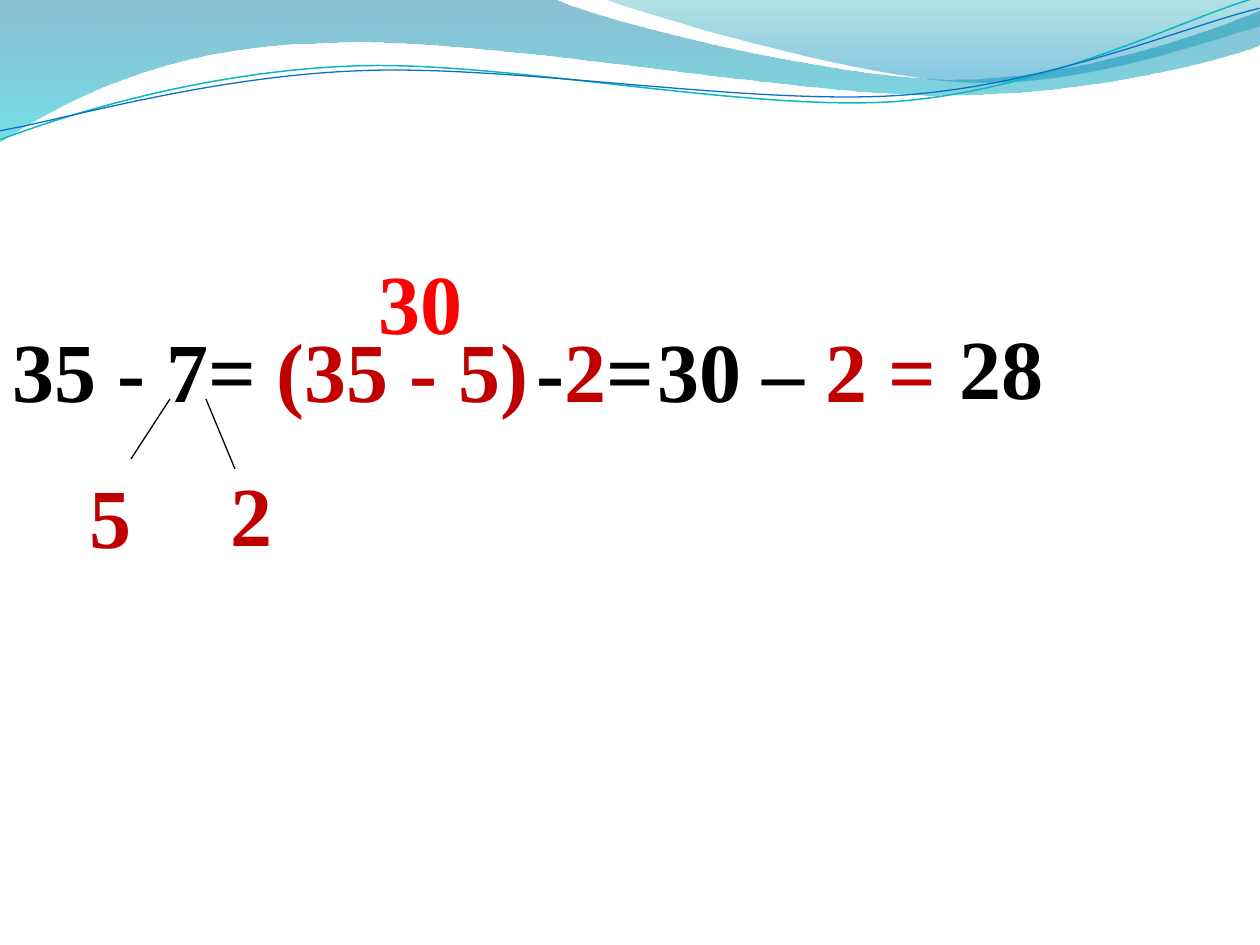
from lxml.etree import SubElement
from pptx import Presentation
from pptx.dml.color import RGBColor
from pptx.enum.shapes import MSO_CONNECTOR
from pptx.enum.text import PP_ALIGN
from pptx.oxml.ns import qn
from pptx.util import Pt

PX = 914400 / 126
COLORS = {
    "black": "000000", "dark_red": "C00000", "red": "FF0000",
    "deep_blue": "0074A1", "cyan": "00C6CF", "teal": "00A1A9",
    "sky": "008BBF", "teal_line": "0AB8BF", "blue_line": "0F6FC6",
}


def color(name):
    return RGBColor.from_string(COLORS[name])


def add_wave(start, segments, close):
    """Draw an outline; a segment is one line end or three Bezier points."""
    points = [point for segment in segments for point in segment]
    builder = slide.shapes.build_freeform(*start, scale=PX)
    builder.add_line_segments(points, close=close)
    shape = builder.convert_to_shape()
    shape.shadow.inherit = False
    # Merge each three line ends of a curve into one Bezier element
    line_ends = iter(list(shape._element.iter(qn("a:lnTo"))))
    for segment in segments:
        group = [next(line_ends) for point in segment]
        if len(group) == 3:
            group[0].tag = qn("a:cubicBezTo")
            for line_end in group[1:]:
                group[0].append(line_end[0])
                line_end.getparent().remove(line_end)
    return shape


presentation = Presentation()
presentation.slide_width = round(1260 * PX)
presentation.slide_height = round(945 * PX)
slide = presentation.slides.add_slide(presentation.slide_layouts[6])

# Translucent waves: start, segments, gradient stops (position, color, opacity %)
waves = [
    ((0, 0), [[(554, -1)],
              [(600, 21), (837, 79), (955, 79)],
              [(1075, 79), (1207, 33), (1260, 11)],
              [(1261, 45)],
              [(1239, 55), (1096, 96), (940, 95)],
              [(784, 95), (481, 35), (324, 43)],
              [(163, 45), (58, 105), (-1, 142)]],
     [(0, "deep_blue", 45), (1, "cyan", 55)]),
    ((604, -1), [[(641, 14), (859, 78), (969, 82)],
                 [(1079, 87), (1211, 40), (1260, 26)],
                 [(1260, 0)]],
     [(0, "teal", 30), (0.8, "sky", 45)]),
]
for start, segments, stops in waves:
    shape = add_wave(start, segments, close=True)
    shape.line.fill.background()
    shape.fill.gradient()
    shape.fill.gradient_angle = 270
    for stop, (position, name, opacity) in zip(shape.fill.gradient_stops, stops):
        stop.position = position
        stop.color.rgb = color(name)
    for element, (position, name, opacity) in zip(shape._element.iter(qn("a:srgbClr")), stops):
        SubElement(element, qn("a:alpha")).set("val", str(opacity * 1000))

# Thin curves over the waves, slightly tilted
curves = [
    ((-2, 110), [[(59, 90), (199, 52), (350, 53)],
                 [(499, 53), (745, 118), (896, 114)],
                 [(1049, 109), (1184, 45), (1260, 27)]], "teal_line", 0.85),
    ((-2, 101), [[(57, 94), (207, 57), (357, 58)],
                 [(509, 58), (750, 112), (902, 108)],
                 [(1052, 104), (1188, 52), (1262, 38)]], "blue_line", 0.75),
]
for start, segments, name, width in curves:
    shape = add_wave(start, segments, close=False)
    shape.rotation = 357.3
    shape.fill.background()
    shape.line.color.rgb = color(name)
    shape.line.width = Pt(width)

# Branches splitting 7 into 5 and 2
for ends in [(170, 399, 131, 459), (206, 399, 235, 469)]:
    branch = slide.shapes.add_connector(MSO_CONNECTOR.STRAIGHT, *(round(v * PX) for v in ends))
    branch.line.color.rgb = color("black")
    branch.line.width = Pt(0.75)
    SubElement(branch._element.spPr, qn("a:effectLst"))

# Parts of the calculation: left, top, width, colored runs
terms = [
    (0, 312, 287, [("35 - 7=", "black")]),
    (77, 458, 69, [("5", "dark_red")]),
    (218, 456, 69, [("2", "dark_red")]),
    (264, 312, 286, [("(35 - 5)", "dark_red")]),
    (524, 312, 286, [("-", "black"), ("2", "dark_red"), ("=", "black")]),
    (645, 312, 401, [("30 – ", "black"), ("2 =", "dark_red")]),
    (947, 309, 286, [("28", "black")]),
    (317, 244, 207, [("30", "red")]),
]
for left, top, width, runs in terms:
    box = slide.shapes.add_textbox(*(round(v * PX) for v in (left, top, width, 115)))
    box.text_frame.word_wrap = True
    paragraph = box.text_frame.paragraphs[0]
    for text, name in runs:
        run = paragraph.add_run()
        run.text = text
        run.font.name = "Times New Roman"
        run.font.size = Pt(48)
        run.font.bold = True
        run.font.color.rgb = color(name)
paragraph.alignment = PP_ALIGN.CENTER  # the partial result sits centred above the bracket

presentation.save("out.pptx")
